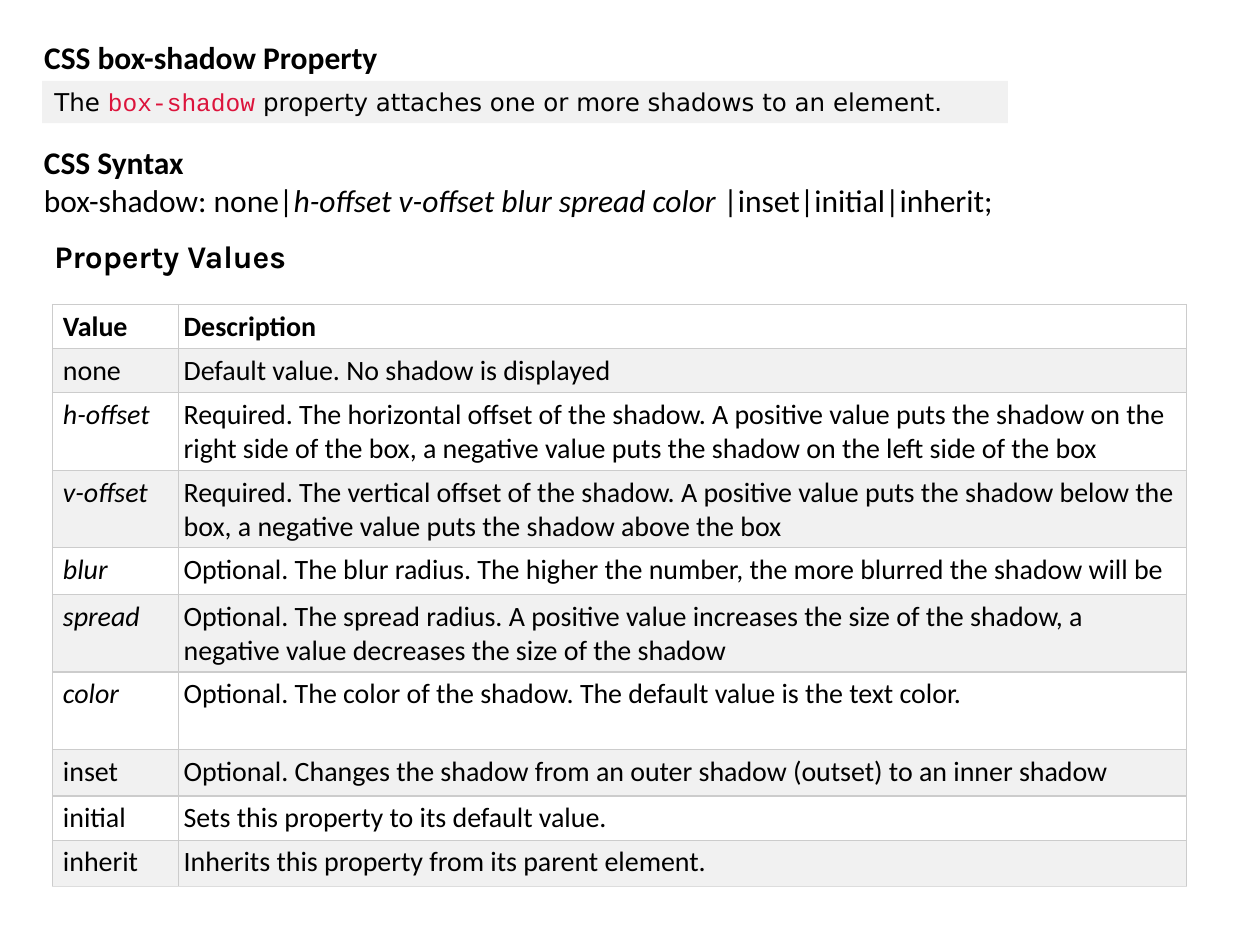
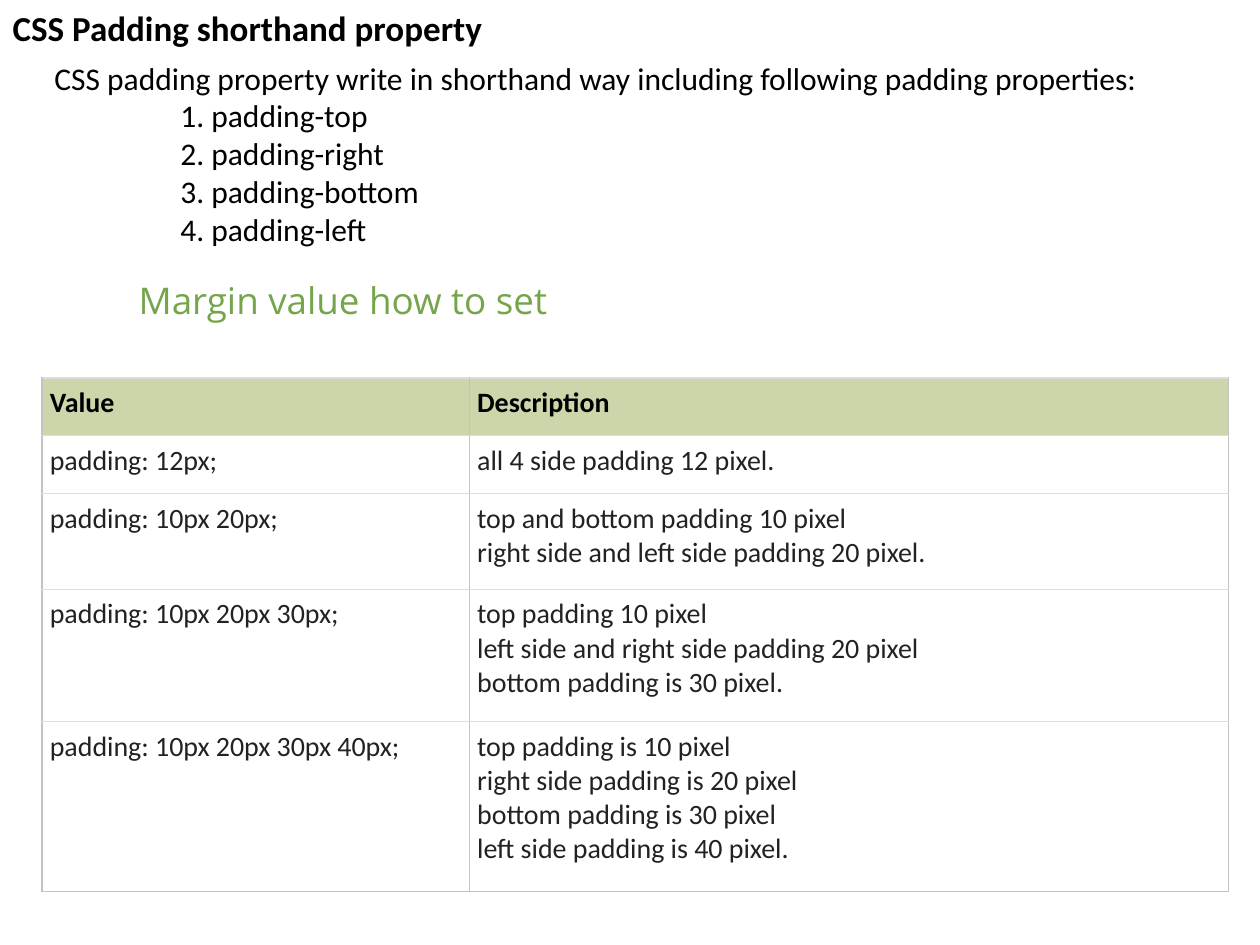
"""Builds two slides on the CSS box-shadow and padding properties."""
from lxml.etree import SubElement
from pptx import Presentation
from pptx.dml.color import RGBColor
from pptx.enum.shapes import MSO_SHAPE
from pptx.enum.text import MSO_ANCHOR, MSO_AUTO_SIZE, PP_ALIGN
from pptx.oxml import parse_xml
from pptx.oxml.ns import nsdecls, qn
from pptx.util import Pt

COLORS = {
    "black": "000000", "ink": "222222", "white": "FFFFFF", "band": "F1F1F1",
    "code": "DC143C", "green": "75A54B", "header": "CBD7AB",
    "grid": "CCCCCC", "side": "C3C3C3", "rule": "DDDDDD",
}

BODY = {"name": "Calibri", "size": Pt(18), "bold": False, "italic": False, "color": "black"}
BOLD = BODY | {"bold": True}
ITALIC = BODY | {"italic": True}
CELL = BODY | {"size": Pt(16)}
CELL_BOLD = CELL | {"bold": True}
CELL_ITALIC = CELL | {"italic": True}
CELL_INK = CELL | {"color": "ink"}
BIG_TITLE = BOLD | {"size": Pt(20)}
SUMMARY = BODY | {"name": "DejaVu Sans", "size": Pt(14)}
SUMMARY_CODE = SUMMARY | {"name": "Courier New", "color": "code"}
VALUES_HEADING = BOLD | {"name": "Karla"}
MARGIN_HEADING = BODY | {"name": "Open Sans", "size": Pt(21), "color": "green"}

SHADOW_TITLE = "CSS box-shadow Property"
SHADOW_SUMMARY = [[
    ("The ", SUMMARY),
    ("box-shadow", SUMMARY_CODE),
    (" property attaches one or more shadows to an element.", SUMMARY),
]]
SHADOW_SYNTAX = [
    [("CSS Syntax", BOLD)],
    [("box-shadow: none|", BODY),
     ("h-offset v-offset blur spread color ", ITALIC),
     ("|inset|initial|inherit;", BODY)],
]
SHADOW_VALUES = [
    ("Value", "Description"),
    ("none", "Default value. No shadow is displayed"),
    ("h-offset", "Required. The horizontal offset of the shadow. A positive value puts the shadow "
                 "on the right side of the box, a negative value puts the shadow on the left side "
                 "of the box"),
    ("v-offset", "Required. The vertical offset of the shadow. A positive value puts the shadow "
                 "below the box, a negative value puts the shadow above the box"),
    ("blur", "Optional. The blur radius. The higher the number, the more blurred the shadow will be"),
    ("spread", "Optional. The spread radius. A positive value increases the size of the shadow, "
               "a negative value decreases the size of the shadow"),
    ("color", "Optional. The color of the shadow. The default value is the text color."),
    ("inset", "Optional. Changes the shadow from an outer shadow (outset) to an inner shadow"),
    ("initial", "Sets this property to its default value."),
    ("inherit", "Inherits this property from its parent element."),
]
LENGTH_NAMES = {"h-offset", "v-offset", "blur", "spread", "color"}
SHADOW_ROWS = [25.1, 25.1, 44.3, 44.3, 26.6, 44.3, 44.3, 26.6, 25.1, 26.6]

PADDING_TITLE = "CSS Padding shorthand property"
PADDING_INTRO = ("CSS padding property write in shorthand way including "
                 "following padding properties:")
PADDING_PROPERTIES = ["padding-top", "padding-right", "padding-bottom", "padding-left"]
MARGIN_TITLE = "Margin value how to set"
PADDING_VALUES = [
    ("Value", "Description"),
    ("padding: 12px;", "all 4 side padding 12 pixel."),
    ("padding: 10px 20px;",
     "top and bottom padding 10 pixel\nright side and left side padding 20 pixel."),
    ("padding: 10px 20px 30px;",
     "top padding 10 pixel\nleft side and right side padding 20 pixel\n"
     "bottom padding is 30 pixel."),
    ("padding: 10px 20px 30px 40px;",
     "top padding is 10 pixel\nright side padding is 20 pixel\n"
     "bottom padding is 30 pixel\nleft side padding is 40 pixel."),
]
PADDING_ROWS = [33.1, 33.1, 54.7, 75.6, 97.2]


def rgb(color):
    return RGBColor.from_string(COLORS[color])


def apply(target, values):
    for attribute, value in values.items():
        setattr(target, attribute, value)


def fill(target, color):
    target.fill.solid()
    target.fill.fore_color.rgb = rgb(color)


def write(frame, paragraphs):
    for index, runs in enumerate(paragraphs):
        paragraph = frame.add_paragraph() if index else frame.paragraphs[0]
        paragraph.alignment = PP_ALIGN.LEFT
        for words, style in runs:
            run = paragraph.add_run()
            run.text = words
            apply(run.font, {key: style[key] for key in ("name", "size", "bold", "italic")})
            run.font.color.rgb = rgb(style["color"])


def add_title_slide(deck, title, style, box):
    slide = deck.slides.add_slide(deck.slide_layouts[5])
    heading = slide.shapes.title
    apply(heading, dict(zip(("left", "top", "width", "height"), map(Pt, box))))
    apply(heading.text_frame, {"word_wrap": False, "auto_size": MSO_AUTO_SIZE.NONE,
                               "vertical_anchor": MSO_ANCHOR.TOP})
    write(heading.text_frame, [[(title, style)]])
    return slide


def add_text(slide, box, paragraphs):
    frame = slide.shapes.add_textbox(*map(Pt, box)).text_frame
    frame.word_wrap = True
    write(frame, paragraphs)
    return frame


def add_band(slide, box, color, paragraphs, **frame_values):
    band = slide.shapes.add_shape(MSO_SHAPE.RECTANGLE, *map(Pt, box))
    band.shadow.inherit = False
    band.line.fill.background()
    fill(band, color)
    apply(band.text_frame, {"word_wrap": True, "vertical_anchor": MSO_ANCHOR.MIDDLE} | frame_values)
    write(band.text_frame, paragraphs)


def number(paragraph, indent, hanging):
    properties = paragraph._p.get_or_add_pPr()
    properties.set("marL", str(Pt(indent + hanging)))
    properties.set("indent", str(-Pt(hanging)))
    SubElement(properties, qn("a:buAutoNum"), type="arabicPeriod")


def set_borders(cell, colors):
    properties = cell._tc.get_or_add_tcPr()
    for index, edge in enumerate("LRTB"):
        properties.insert(index, parse_xml(
            f'<a:ln{edge} {nsdecls("a")} w="{Pt(0.75)}"><a:solidFill>'
            f'<a:srgbClr val="{COLORS[colors[edge]]}"/></a:solidFill></a:ln{edge}>'))


def add_values(slide, left, top, widths, heights, values, look):
    table = slide.shapes.add_table(len(values), len(widths), Pt(left), Pt(top),
                                   Pt(sum(widths)), Pt(sum(heights))).table
    apply(table, {"first_row": False, "horz_banding": False})
    for column, width in zip(table.columns, widths):
        column.width = Pt(width)
    for row, height in zip(table.rows, heights):
        row.height = Pt(height)
    for r, entry in enumerate(values):
        borders = look["borders"] | ({"B": look["last"]} if r == len(values) - 1 else {})
        for c, words in enumerate(entry):
            cell = table.cell(r, c)
            inset = Pt(look["inset"])
            apply(cell, dict.fromkeys(
                ("margin_left", "margin_top", "margin_right", "margin_bottom"), inset))
            if c == 0:
                cell.margin_left = Pt(look["first_inset"])
            if r == 0:
                style = CELL_BOLD
            else:
                style = CELL_ITALIC if words in LENGTH_NAMES else look["style"]
            write(cell.text_frame, [[(line, style)] for line in words.split("\n")])
            fill(cell, look["header"] if r == 0 else look["bands"][r % 2])
            set_borders(cell, borders)


def build_shadow_slide(deck):
    slide = add_title_slide(deck, SHADOW_TITLE, BOLD, (18, 18, 207.4, 29))
    add_band(slide, (24, 46.2, 552, 24.2), "band", SHADOW_SUMMARY)
    add_text(slide, (18, 78, 654, 51), SHADOW_SYNTAX)
    add_values(slide, 30, 174, (72, 576), SHADOW_ROWS, SHADOW_VALUES, {
        "inset": 3, "first_inset": 6, "style": CELL, "header": "white",
        "bands": ("white", "band"), "borders": dict.fromkeys("LRTB", "grid"), "last": "rule"})
    add_text(slide, (24, 132, 149, 29), [[("Property Values", VALUES_HEADING)]])


def build_padding_slide(deck):
    slide = add_title_slide(deck, PADDING_TITLE, BIG_TITLE, (0, 0, 285, 31.5))
    intro = add_text(slide, (24, 30, 666, 116.6),
                     [[(words, BODY)] for words in (PADDING_INTRO, *PADDING_PROPERTIES)])
    for paragraph in intro.paragraphs[1:]:
        number(paragraph, 72, 17.7)
    add_values(slide, 24, 216, (244.2, 433.8), PADDING_ROWS, PADDING_VALUES, {
        "inset": 4.5, "first_inset": 4.5, "style": CELL_INK, "header": "header",
        "bands": ("white", "white"), "last": "side",
        "borders": {"L": "side", "R": "side", "T": "rule", "B": "rule"}})
    add_band(slide, (0, 143.3, 450, 68.4), "white", [[(MARGIN_TITLE, MARGIN_HEADING)]],
             margin_left=Pt(79.2), margin_top=Pt(7.2), margin_bottom=Pt(20))


def main():
    deck = Presentation()
    apply(deck, {"slide_width": Pt(720), "slide_height": Pt(540)})
    build_shadow_slide(deck)
    build_padding_slide(deck)
    deck.save("out.pptx")


if __name__ == "__main__":
    main()
